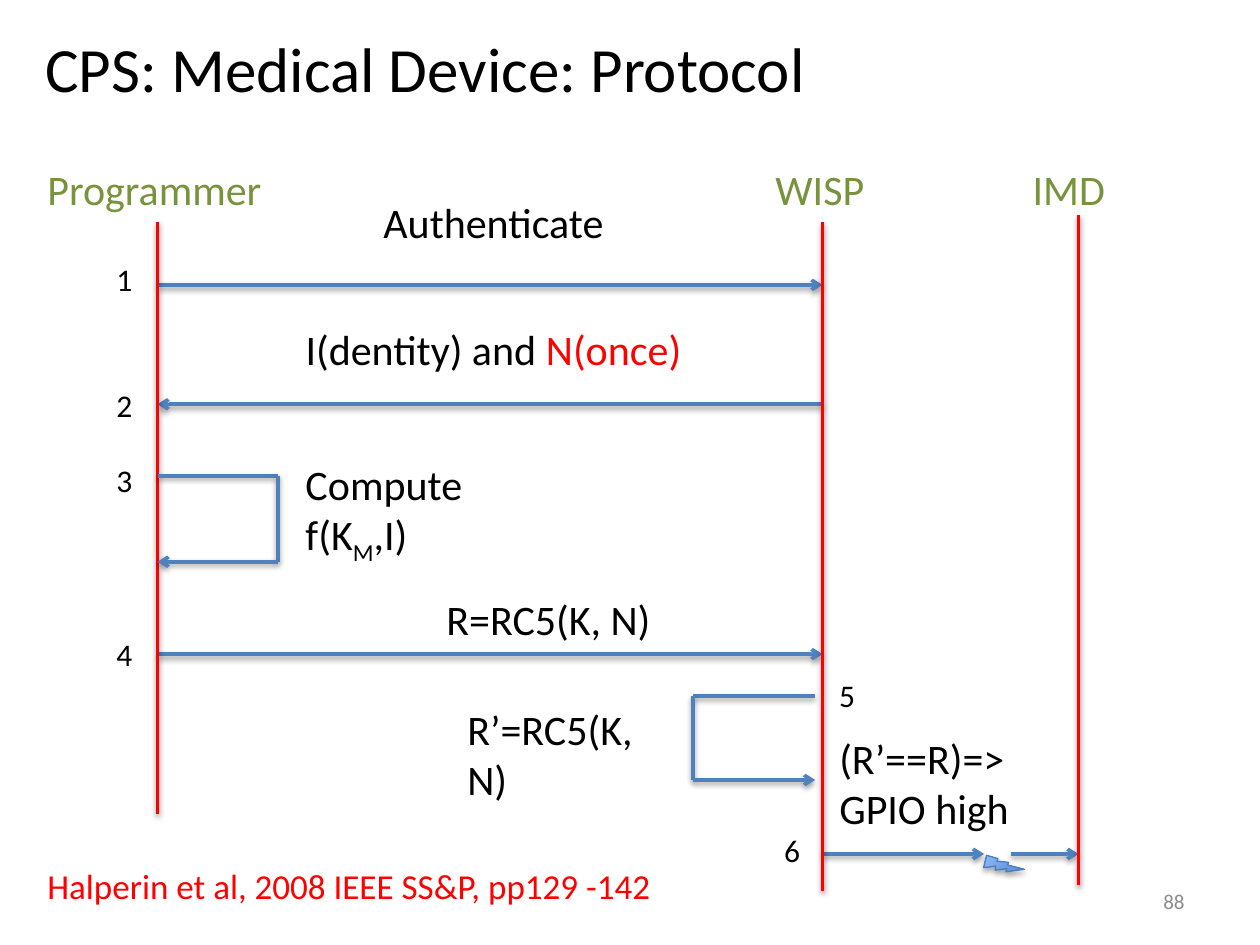
from dataclasses import dataclass

from lxml import etree
from pptx import Presentation
from pptx.dml.color import RGBColor
from pptx.enum.shapes import MSO_CONNECTOR, MSO_SHAPE
from pptx.enum.text import MSO_ANCHOR, PP_ALIGN
from pptx.oxml.ns import qn
from pptx.util import Pt

STRAIGHT = MSO_CONNECTOR.STRAIGHT
BOLT = MSO_SHAPE.LIGHTNING_BOLT
MIDDLE = MSO_ANCHOR.MIDDLE
LEFT, RIGHT = PP_ALIGN.LEFT, PP_ALIGN.RIGHT

FONT = "Calibri"
COLORS = {
    "text": "000000",
    "actor": "77933C",
    "red": "FF0000",
    "message": "4F81BD",
    "number": "8C8C8C",
    "bolt_dark": "3F80CE",
    "bolt_light": "A4C4FF",
    "bolt_line": "4B7EBC",
}

# Horizontal positions of the three lifelines
PROGRAMMER, WISP, IMD = 90, 470, 616.3


@dataclass
class Run:
    text: str
    color: str = ""
    subscript: bool = False


@dataclass
class Label:
    lines: list[list[Run]]
    left: float
    top: float
    width: float
    height: float = 36
    size: float = 24
    color: str = "text"
    align: PP_ALIGN = LEFT
    wrap: bool = False


@dataclass
class Line:
    x1: float
    y1: float
    x2: float
    y2: float
    color: str = "message"
    arrow: bool = True


def plain(*texts: str) -> list[list[Run]]:
    """One unformatted run per line of text."""
    return [[Run(text)] for text in texts]


def step(number: int, left: float, top: float) -> Label:
    return Label(plain(str(number)), left, top, 23.8, 29, 18)


def actor(name: str, left: float, width: float) -> Label:
    return Label(plain(name), left, 90, width, color="actor")


def self_call(x: float, far_x: float, top: float, bottom: float) -> list[Line]:
    """Three lines that leave a lifeline and return to it."""
    return [
        Line(x, top, far_x, top, arrow=False),
        Line(far_x, top, far_x, bottom, arrow=False),
        Line(far_x, bottom, x, bottom),
    ]


LIFELINES = [
    Line(PROGRAMMER, 126.7, PROGRAMMER, 465, "red", False),
    Line(WISP, 126.7, WISP, 509, "red", False),
    Line(IMD, 123, IMD, 505.5, "red", False),
]
MESSAGES = [
    Line(PROGRAMMER, 162.8, WISP, 162.8),
    Line(WISP, 231, PROGRAMMER, 231),
    Line(PROGRAMMER, 373.8, WISP, 373.8),
    Line(WISP, 488, 562.3, 488),
    Line(577.5, 488, IMD, 488),
]
SELF_CALLS = [
    self_call(PROGRAMMER, 159, 272, 321),
    self_call(465.8, 396, 397.8, 445.7),
]
LABELS = [
    actor("Programmer", 20, 139),
    actor("WISP", 436, 65.5),
    actor("IMD", 583, 56),
    Label(plain("Authenticate"), 212, 108.5, 142.5),
    Label([[Run("I(dentity) and "), Run("N(once)", "red")]], 167.5, 181.5, 237),
    Label([[Run("Compute")],
           [Run("f(K"), Run("M", subscript=True), Run(",I)")]],
          167.5, 258.5, 105, 65.5),
    Label(plain("R=RC5(K, N)"), 248, 335.5, 131),
    Label(plain("R’=RC5(K, N)"), 260, 398.3, 136),
    Label(plain("(R’==R)=>", "GPIO high"), 472.5, 415, 112, 65.5),
    *(step(n, 59.5, top) for n, top in
      enumerate((145, 217, 260, 359.5), start=1)),
    step(5, 472.5, 383),
    step(6, 441, 471.5),
    Label(plain("Halperin et al, 2008 IEEE SS&P, pp129 -142"),
          20, 490.5, 365, 31.5, 20, "red"),
    Label(plain("88"), 516, 500.5, 168, 28.8, 12, "number", RIGHT, True),
]


def rgb(name: str) -> RGBColor:
    return RGBColor.from_string(COLORS[name])


def draw_line(shapes, line: Line) -> None:
    s = shapes.add_connector(STRAIGHT, Pt(line.x1), Pt(line.y1),
                             Pt(line.x2), Pt(line.y2))
    s.line.width = Pt(2)
    s.line.color.rgb = rgb(line.color)
    if line.arrow:
        ln = s.element.spPr.find(qn("a:ln"))
        etree.SubElement(ln, qn("a:tailEnd"), type="arrow")


def draw_label(shapes, label: Label) -> None:
    s = shapes.add_textbox(Pt(label.left), Pt(label.top),
                           Pt(label.width), Pt(label.height))
    tf = s.text_frame
    tf.word_wrap = label.wrap
    if label.wrap:
        tf.vertical_anchor = MIDDLE
    for i, line in enumerate(label.lines):
        p = tf.add_paragraph() if i else tf.paragraphs[0]
        p.alignment = label.align
        for run in line:
            r = p.add_run()
            r.text = run.text
            r.font.name = FONT
            r.font.size = Pt(label.size)
            r.font.color.rgb = rgb(run.color or label.color)
            if run.subscript:
                r._r.get_or_add_rPr().set("baseline", "-25000")


def draw_title(slide, text: str) -> None:
    s = slide.shapes.title
    s.left, s.top, s.width, s.height = Pt(18.7), Pt(12.2), Pt(637), Pt(52.6)
    s.text_frame.text = text
    s.text_frame.vertical_anchor = MIDDLE
    p = s.text_frame.paragraphs[0]
    p.alignment = LEFT
    font = p.runs[0].font
    font.name, font.size = FONT, Pt(36)
    font.color.rgb = rgb("text")


def draw_bolt(shapes) -> None:
    """The radio signal between the WISP and the IMD."""
    s = shapes.add_shape(BOLT, Pt(564.5), Pt(484.5), Pt(15.8), Pt(20.9))
    s.rotation = 315
    s.fill.gradient()
    s.fill.gradient_angle = 90
    for stop, name in zip(s.fill.gradient_stops, ("bolt_dark", "bolt_light")):
        stop.color.rgb = rgb(name)
    s.line.color.rgb = rgb("bolt_line")
    s.line.width = Pt(0.75)


def main() -> None:
    prs = Presentation()
    prs.slide_width, prs.slide_height = Pt(720), Pt(540)
    slide = prs.slides.add_slide(prs.slide_layouts[5])
    draw_title(slide, "CPS: Medical Device: Protocol")
    for line in MESSAGES + LIFELINES:
        draw_line(slide.shapes, line)
    for call in SELF_CALLS:
        group = slide.shapes.add_group_shape()
        for line in call:
            draw_line(group.shapes, line)
    for label in LABELS:
        draw_label(slide.shapes, label)
    draw_bolt(slide.shapes)
    prs.save("out.pptx")


if __name__ == "__main__":
    main()
